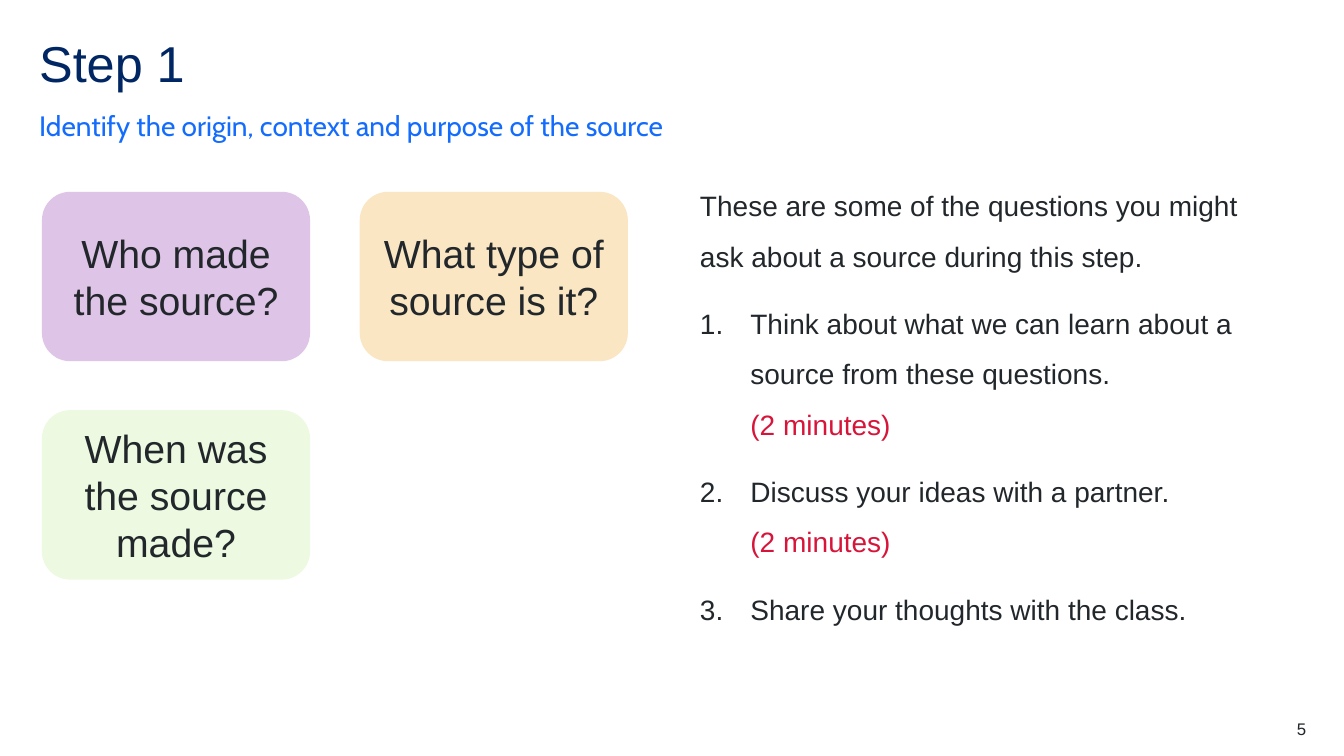
from lxml import etree
from pptx import Presentation
from pptx.dml.color import RGBColor
from pptx.enum import shapes, text
from pptx.oxml import ns
from pptx.util import Pt

COLOURS = {
    "navy": "002664",
    "blue": "146CFD",
    "ink": "22272B",
    "red": "D7153A",
    "lilac": "DEC4E6",
    "peach": "FAE6C2",
    "mint": "EDF9E0",
}


def set_frame(shape, anchor, margin=0):
    frame = shape.text_frame
    frame.word_wrap = True
    frame.auto_size = text.MSO_AUTO_SIZE.NONE
    frame.vertical_anchor = anchor
    frame.margin_left = frame.margin_right = Pt(margin)
    frame.margin_top = frame.margin_bottom = Pt(margin / 2)
    return frame


def format_runs(paragraph, size, colour, align=text.PP_ALIGN.LEFT, face="Arial"):
    paragraph.alignment = align
    for run in paragraph.runs:
        run.font.size = Pt(size)
        run.font.name = face
        run.font.color.rgb = RGBColor.from_string(COLOURS[colour])


prs = Presentation()
prs.slide_width, prs.slide_height = Pt(960), Pt(540)
slide = prs.slides.add_slide(prs.slide_layouts[5])

title = slide.shapes.title
title.left, title.top, title.width, title.height = Pt(28), Pt(28), Pt(904), Pt(43)
heading = set_frame(title, text.MSO_ANCHOR.TOP)
heading.text = "Step 1"
heading.paragraphs[0].line_spacing = 0.9
format_runs(heading.paragraphs[0], 36, "navy")

subtitle = slide.shapes.add_textbox(Pt(28), Pt(77), Pt(904), Pt(24.5))
aim = set_frame(subtitle, text.MSO_ANCHOR.BOTTOM)
aim.text = "Identify the origin, context and purpose of the source"
aim.paragraphs[0].line_spacing = 1.5
aim.paragraphs[0].space_after = Pt(12)
format_runs(aim.paragraphs[0], 20, "blue", face="Cabin")

questions = [
    ("Who made the source?", "lilac"),
    ("What type of source is it?", "peach"),
    ("When was the source made?", "mint"),
]
for index, (question, fill) in enumerate(questions):
    row, column = divmod(index, 2)
    card = slide.shapes.add_shape(
        shapes.MSO_SHAPE.ROUNDED_RECTANGLE,
        Pt(30 + 227 * column), Pt(137 + 156 * row), Pt(191.5), Pt(121))
    card.shadow.inherit = False
    card.fill.solid()
    card.fill.fore_color.rgb = RGBColor.from_string(COLOURS[fill])
    card.line.fill.background()
    label = set_frame(card, text.MSO_ANCHOR.MIDDLE, 7.2)
    label.text = question
    format_runs(label.paragraphs[0], 28, "ink", text.PP_ALIGN.CENTER)

instructions = slide.shapes.add_textbox(Pt(500), Pt(123), Pt(414), Pt(379))
task = set_frame(instructions, text.MSO_ANCHOR.TOP)
steps = [
    "These are some of the questions you might ask about a source during this step.",
    "Think about what we can learn about a source from these questions.\v(2 minutes)",
    "Discuss your ideas with a partner.\v(2 minutes)",
    "Share your thoughts with the class.",
]
for index, step in enumerate(steps):
    paragraph = task.add_paragraph() if index else task.paragraphs[0]
    paragraph.text = step
    if index:
        properties = paragraph._p.get_or_add_pPr()
        properties.set("marL", str(Pt(36)))
        properties.set("indent", str(Pt(-36)))
        etree.SubElement(properties, ns.qn("a:buFont"), typeface="+mj-lt")
        etree.SubElement(properties, ns.qn("a:buAutoNum"), type="arabicPeriod")
    paragraph.line_spacing = 1.5
    paragraph.space_after = Pt(12)
    format_runs(paragraph, 20, "ink")
    for timing in paragraph.runs[1:]:
        timing.font.color.rgb = RGBColor.from_string(COLOURS["red"])

page_number = slide.shapes.add_textbox(Pt(876), Pt(513.5), Pt(57), Pt(14.5))
page = set_frame(page_number, text.MSO_ANCHOR.TOP)
page.text = "5"
format_runs(page.paragraphs[0], 12, "ink", text.PP_ALIGN.RIGHT)

prs.save("out.pptx")
